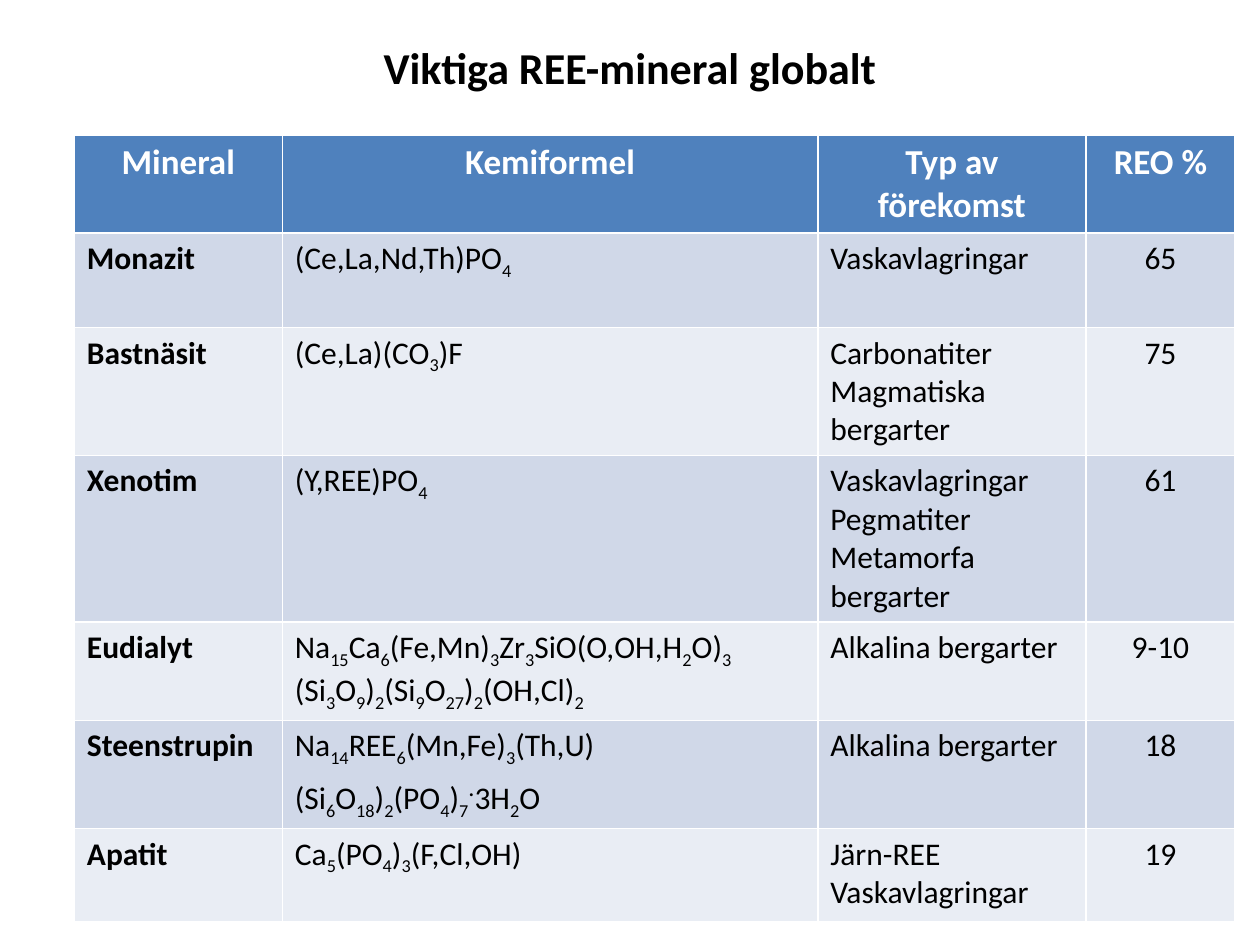
from pptx import Presentation
from pptx.dml.color import RGBColor
from pptx.enum.text import MSO_ANCHOR, PP_ALIGN
from pptx.util import Inches, Pt

LEFT, MID = PP_ALIGN.LEFT, PP_ALIGN.CENTER
BLACK = RGBColor(0x00, 0x00, 0x00)
WHITE = RGBColor(0xFF, 0xFF, 0xFF)
BLUE = RGBColor(0x4F, 0x81, 0xBD)
BANDS = [RGBColor(0xE9, 0xED, 0xF4), RGBColor(0xD0, 0xD8, 0xE8)]

WIDTHS = [1.65, 4.25, 2.13, 1.18]
HEIGHTS = [0.77, 0.75, 1.01, 1.32, 0.78, 0.86, 0.74]
HEAD = ["Mineral", "Kemiformel", "Typ av förekomst", "REO %"]
# In a formula, every second part between underscores is an index
ROWS = [
    ["Monazit", "(Ce,La,Nd,Th)PO_4", "Vaskavlagringar", "65"],
    ["Bastnäsit", "(Ce,La)(CO_3_)F", "Carbonatiter|Magmatiska bergarter", "75"],
    ["Xenotim", "(Y,REE)PO_4",
     "Vaskavlagringar|Pegmatiter|Metamorfa bergarter", "61"],
    ["Eudialyt",
     "Na_15_Ca_6_(Fe,Mn)_3_Zr_3_SiO(O,OH,H_2_O)_3_"
     "\n(Si_3_O_9_)_2_(Si_9_O_27_)_2_(OH,Cl)_2",
     "Alkalina bergarter", "9-10"],
    ["Steenstrupin",
     "Na_14_REE_6_(Mn,Fe)_3_(Th,U)(Si_6_O_18_)_2_(PO_4_)_7__._3H_2_O",
     "Alkalina bergarter", "18"],
    ["Apatit", "Ca_5_(PO_4_)_3_(F,Cl,OH)", "Järn-REE|Vaskavlagringar", "19"],
]


def add_run(para, text, size, color, bold, base=0):
    run = para.add_run()
    run.text = text
    font = run.font
    font.name, font.size, font.bold = "Calibri", Pt(size), bold
    font.color.rgb = color
    if base:
        run._r.get_or_add_rPr().set("baseline", str(base * 1000))


def fill_cell(cell, text, size, color, bold, align, back):
    cell.fill.solid()
    cell.fill.fore_color.rgb = back
    frame = cell.text_frame
    for n, line in enumerate(text.split("|")):
        para = frame.add_paragraph() if n else frame.paragraphs[0]
        para.alignment = align
        for k, part in enumerate(line.split("_")):
            if part.startswith("\n"):
                para.add_line_break()
                part = part.strip()
            if part == ".":
                add_run(para, part, 24, color, bold, 30)
            elif part:
                add_run(para, part, size, color, bold, -25 if k % 2 else 0)


deck = Presentation()
deck.slide_width, deck.slide_height = Inches(10), Inches(7.5)
slide = deck.slides.add_slide(deck.slide_layouts[5])

# Title
title = slide.shapes.title
title.left, title.top = Inches(0.5), Inches(0.3)
title.width, title.height = Inches(9), Inches(0.46)
title.text_frame.vertical_anchor = MSO_ANCHOR.MIDDLE
para = title.text_frame.paragraphs[0]
para.alignment = MID
add_run(para, "Viktiga REE-mineral globalt", 25.2, BLACK, True)

# Mineral table
table = slide.shapes.add_table(
    len(HEIGHTS), len(WIDTHS), Inches(0.59), Inches(1.07),
    Inches(sum(WIDTHS)), Inches(sum(HEIGHTS))).table
for col, width in zip(table.columns, WIDTHS):
    col.width = Inches(width)
for row, height in zip(table.rows, HEIGHTS):
    row.height = Inches(height)

# Header row
for c, text in enumerate(HEAD):
    fill_cell(table.cell(0, c), text, 20, WHITE, True, MID, BLUE)

# Body rows
for r, row in enumerate(ROWS, 1):
    for c, text in enumerate(row):
        fill_cell(table.cell(r, c), text, 18, BLACK, c == 0,
                  MID if c == 3 else LEFT, BANDS[r % 2])

deck.save("out.pptx")
